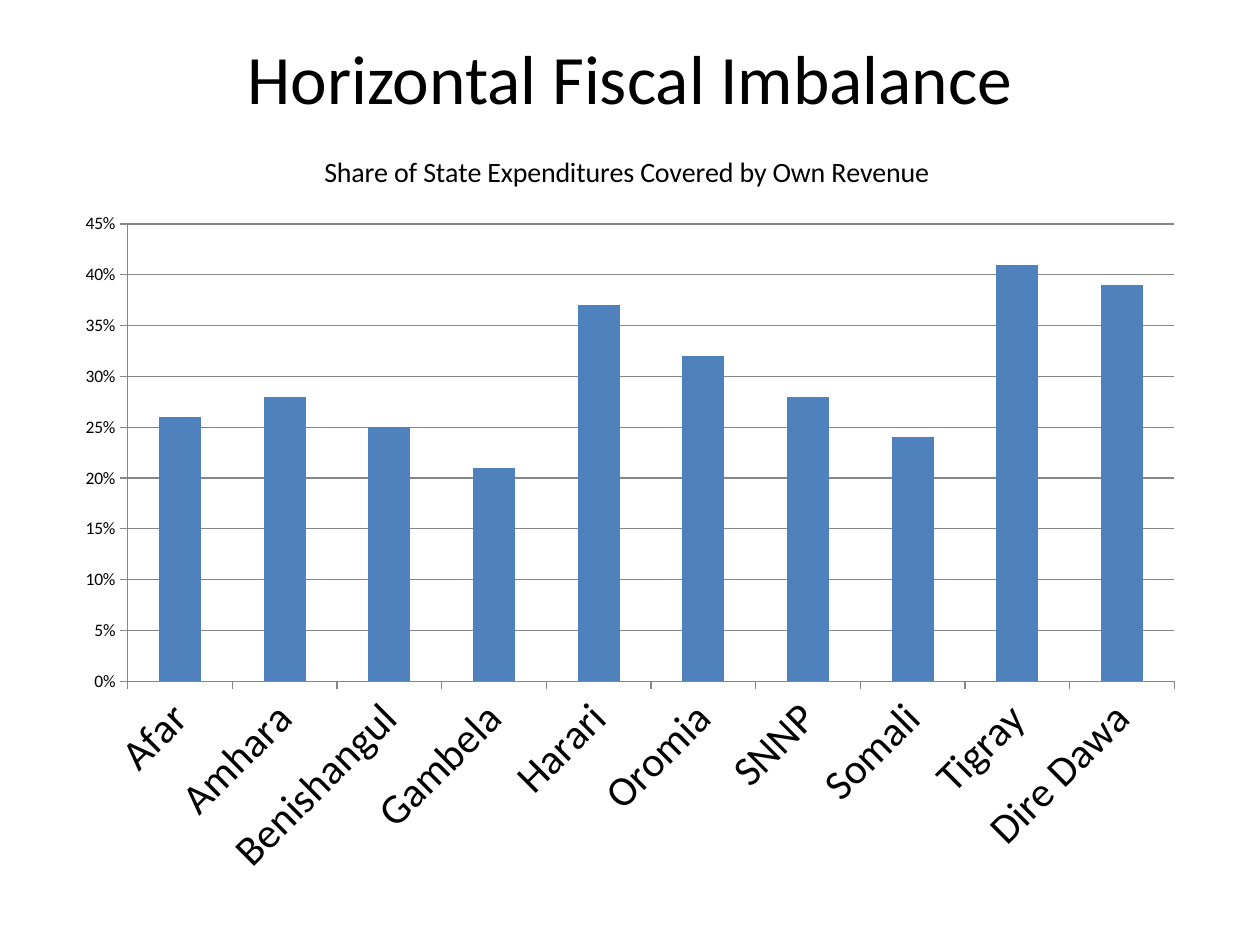
from dataclasses import dataclass

from pptx import Presentation
from pptx.chart.data import CategoryChartData
from pptx.dml.color import RGBColor
from pptx.enum.chart import XL_CHART_TYPE, XL_TICK_MARK
from pptx.enum.text import MSO_ANCHOR, PP_ALIGN
from pptx.util import Emu, Pt

PX_PER_INCH = 126
EMU_PER_INCH = 914400
SHARES = {
    "Afar": 0.26, "Amhara": 0.28, "Benishangul": 0.25, "Gambela": 0.21,
    "Harari": 0.37, "Oromia": 0.32, "SNNP": 0.28, "Somali": 0.24,
    "Tigray": 0.41, "Dire Dawa": 0.39,
}


@dataclass(frozen=True)
class Theme:
    """Colours, font and type sizes of the slide."""
    font: str = "Calibri"
    ink: RGBColor = RGBColor(0, 0, 0)
    bar: RGBColor = RGBColor(0x4F, 0x81, 0xBD)
    rule: RGBColor = RGBColor(0x86, 0x86, 0x86)
    paper: RGBColor = RGBColor(255, 255, 255)
    title: float = 39.6
    chart_title: float = 16
    states: float = 24
    scale: float = 10


THEME = Theme()


def px(*lengths):
    """Turn whole pixels into EMU."""
    return [Emu(round(length * EMU_PER_INCH / PX_PER_INCH)) for length in lengths]


def set_format(target, values):
    """Set each attribute named in values on the target."""
    for name, value in values.items():
        setattr(target, name, value)


def style_font(font, size):
    """Apply the theme's font and ink at the given size."""
    set_format(font, {"name": THEME.font, "size": Pt(size), "bold": False})
    font.color.rgb = THEME.ink


def style_line(line):
    """Draw a thin grey line."""
    line.width = Pt(0.75)
    line.color.rgb = THEME.rule


def add_title(page, text, place):
    """Add the centred slide title."""
    box = page.shapes.add_textbox(*px(*place))
    set_format(box.text_frame, {"word_wrap": True, "vertical_anchor": MSO_ANCHOR.MIDDLE})
    para = box.text_frame.paragraphs[0]
    para.alignment = PP_ALIGN.CENTER
    span = para.add_run()
    span.text = text
    style_font(span.font, THEME.title)


def style_axis(axis, size, values):
    """Style the line, ticks and labels of an axis."""
    set_format(axis, {"major_tick_mark": XL_TICK_MARK.OUTSIDE,
                      "minor_tick_mark": XL_TICK_MARK.NONE, **values})
    style_font(axis.tick_labels.font, size)
    style_line(axis.format.line)


def add_column_chart(page, title, shares, place):
    """Add the column chart with its title and axes."""
    data = CategoryChartData(number_format="0%")
    data.categories = list(shares)
    data.add_series("Series 1", list(shares.values()))
    chart = page.shapes.add_chart(XL_CHART_TYPE.COLUMN_CLUSTERED, *px(*place), data).chart
    set_format(chart, {"has_legend": False, "has_title": True})
    style_font(chart.font, THEME.scale)

    chart.chart_title.include_in_layout = False
    para = chart.chart_title.text_frame.paragraphs[0]
    span = para.add_run()
    span.text = title
    style_font(span.font, THEME.chart_title)

    style_axis(chart.category_axis, THEME.states, {"has_major_gridlines": False})
    chart.category_axis._element.txPr.bodyPr.set("rot", "-2700000")
    style_axis(chart.value_axis, THEME.scale,
               {"has_major_gridlines": True, "minimum_scale": 0,
                "maximum_scale": 0.45, "major_unit": 0.05})
    set_format(chart.value_axis.tick_labels,
               {"number_format": "0%", "number_format_is_linked": False})
    style_line(chart.value_axis.major_gridlines.format.line)

    plot = chart.plots[0]
    set_format(plot, {"gap_width": 150, "vary_by_categories": False})
    fill = plot.series[0].format.fill
    fill.solid()
    fill.fore_color.rgb = THEME.bar


def main():
    """Build and save the slide."""
    deck = Presentation()
    width, height = px(1260, 945)
    set_format(deck, {"slide_width": width, "slide_height": height})
    page = deck.slides.add_slide(deck.slide_layouts[6])
    page.background.fill.solid()
    page.background.fill.fore_color.rgb = THEME.paper
    add_title(page, "Horizontal Fiscal Imbalance", (63, 38, 1134, 78))
    add_column_chart(page, "Share of State Expenditures Covered by Own Revenue ",
                     SHARES, (63, 126, 1134, 766))
    deck.save("out.pptx")


if __name__ == "__main__":
    main()
